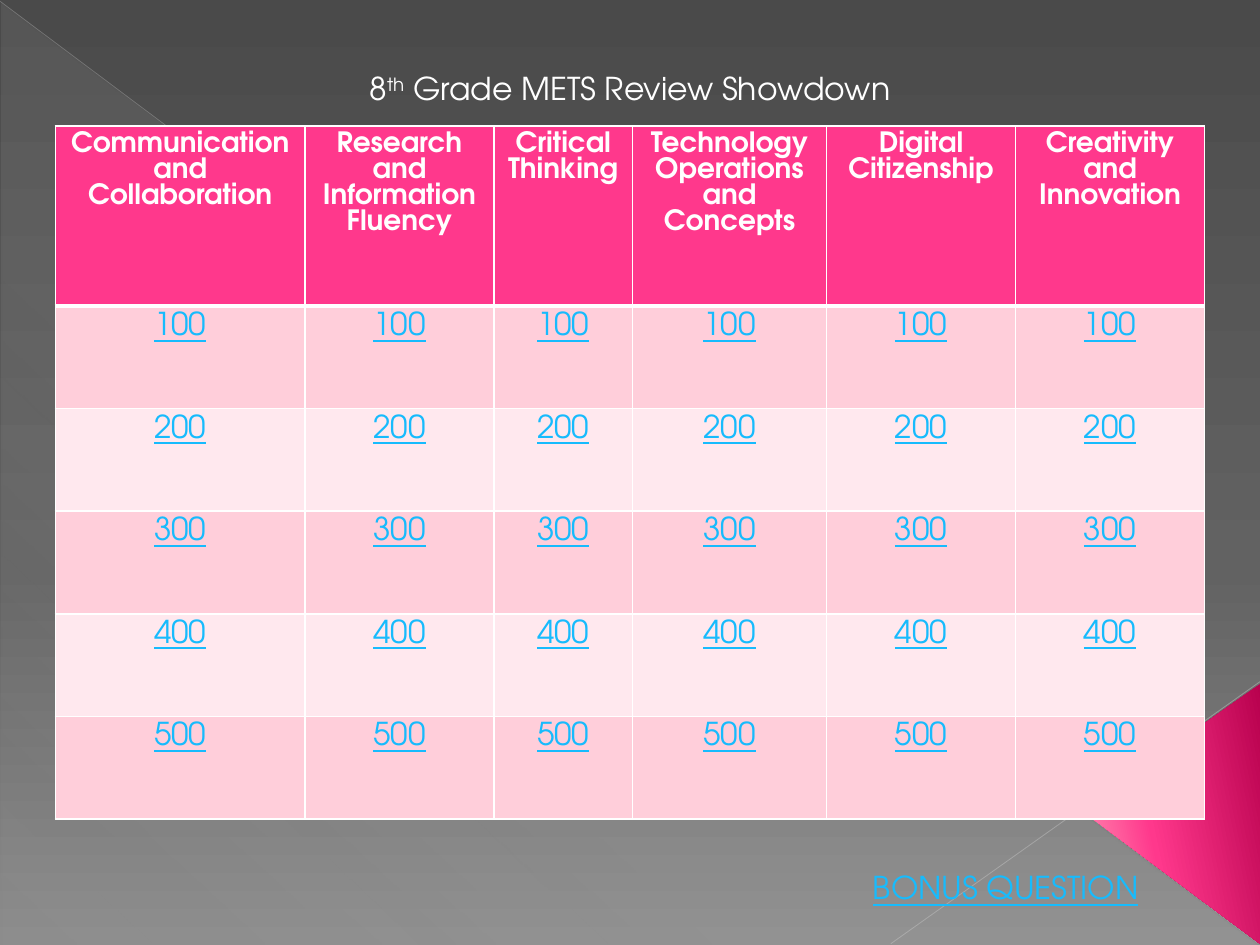
from lxml.etree import SubElement as Sub
from pptx import Presentation
from pptx.dml.color import RGBColor as Rgb
from pptx.enum.shapes import MSO_CONNECTOR as Conn, MSO_SHAPE as Kind
from pptx.enum.text import MSO_ANCHOR as Anchor, PP_ALIGN as Align
from pptx.oxml.ns import qn
from pptx.util import Inches, Pt

FONT = "TeX Gyre Adventor"
HUES = {
    "white": "FFFFFF", "head": "FF388C", "odd": "FFCEDA", "even": "FFE8EE",
    "link": "17BBFD", "top": "4A4A4A", "mid": "626262", "base": "8C8C8C",
    "haze": "D2D2D2", "dark": "B8014E", "pale": "FF9CB9",
    "long": "BFBFBF", "short": "C6C6C6",
}
HEADS = [
    "Communication and Collaboration", "Research and Information Fluency",
    "Critical Thinking", "Technology Operations and Concepts",
    "Digital Citizenship", "Creativity and Innovation",
]
WIDTHS = [1.98, 1.5, 1.1, 1.54, 1.5, 1.5]


def tint(node, hue, alpha=100):
    """Add a colour with its opacity to an XML node."""
    clr = Sub(node, qn("a:srgbClr"), val=HUES[hue])
    if alpha < 100:
        Sub(clr, qn("a:alpha"), val=str(alpha * 1000))


def blend(props, stops, angle):
    """Swap the solid fill of a property node for a gradient."""
    old = props.find(qn("a:solidFill"))
    grad = Sub(props, qn("a:gradFill"), rotWithShape="1")
    props.replace(old, grad)
    rows = Sub(grad, qn("a:gsLst"))
    for spot, hue, alpha in stops:
        tint(Sub(rows, qn("a:gs"), pos=str(spot * 1000)), hue, alpha)
    Sub(grad, qn("a:lin"), ang=str(angle * 60000), scaled="0")


def write(para, text, hue, size=18, bold=False, line=False, lift=0):
    """Add one styled run to a paragraph."""
    run = para.add_run()
    run.text = text
    font = run.font
    font.name, font.size, font.bold = FONT, Pt(size), bold
    font.color.rgb = Rgb.from_string(HUES[hue])
    if line:
        font.underline = True
    if lift:
        run._r.get_or_add_rPr().set("baseline", str(lift * 1000))


def wedge(slide, kind, box, stops, angle, turn=0):
    """Place a gradient triangle in a box."""
    shape = slide.shapes.add_shape(kind, *map(Inches, box))
    shape.shadow.inherit = False
    shape.line.fill.background()
    shape.fill.solid()
    blend(shape._element.spPr, stops, angle)
    shape.rotation = turn
    return shape


def stroke(slide, ends, hue, width, alpha):
    """Draw a thin translucent line."""
    line = slide.shapes.add_connector(Conn.STRAIGHT, *map(Inches, ends))
    line.line.width = Pt(width)
    line.line.color.rgb = Rgb.from_string(HUES[hue])
    props = line._element.spPr
    fill = props.find(qn("a:ln")).find(qn("a:solidFill"))
    fill.remove(fill[0])
    tint(fill, hue, alpha)
    Sub(props, qn("a:effectLst"))


def scene(slide, wide, high):
    """Paint the backdrop and its corner shapes."""
    slide.background.fill.solid()
    back = slide.element.find(".//" + qn("p:bgPr"))
    blend(back, [(0, "top", 100), (60, "mid", 100), (100, "base", 100)], 90)
    wedge(slide, Kind.RIGHT_TRIANGLE, (0.01, 0.02, wide - 0.02, high - 0.02),
          [(0, "haze", 10), (70, "haze", 8), (100, "haze", 1)], 133)
    stroke(slide, (0, 0.01, wide - 0.01, high - 0.01), "long", 0.39, 35)
    stroke(slide, (wide, 5.41, 7.07, high - 0.01), "short", 0.47, 45)
    peak = wedge(slide, Kind.ISOSCELES_TRIANGLE, (8.26, 5.75, 2.07, 1.42),
                 [(0, "dark", 100), (60, "head", 100), (100, "pale", 100)],
                 258, 270)
    peak.adjustments[0] = 0.513


def edge(cell, base):
    """Give a cell white borders with a chosen bottom width."""
    props = cell._tc.get_or_add_tcPr()
    sides = [("lnL", 1), ("lnR", 1), ("lnT", 1), ("lnB", base)]
    for spot, (side, width) in enumerate(sides):
        line = Sub(props, qn("a:" + side), w=str(Pt(width)))
        tint(Sub(line, qn("a:solidFill")), "white")
        props.insert(spot, line)


def board(slide, left, top, wide, high, head=1.43):
    """Build the grid of topics and point values."""
    rows = [HEADS] + [[str(n * 100)] * len(HEADS) for n in range(1, 6)]
    table = slide.shapes.add_table(
        len(rows), len(HEADS), *map(Inches, (left, top, wide, high))).table
    table.horz_banding = False
    for col, width in zip(table.columns, WIDTHS):
        col.width = Inches(width)
    for i, row in enumerate(rows):
        table.rows[i].height = Inches((high - head) / 5 if i else head)
        for j, text in enumerate(row):
            cell = table.cell(i, j)
            cell.fill.solid()
            hue = ("odd" if i % 2 else "even") if i else "head"
            cell.fill.fore_color.rgb = Rgb.from_string(HUES[hue])
            edge(cell, 1 if i else 3)
            para = cell.text_frame.paragraphs[0]
            para.alignment = Align.CENTER
            if i:
                write(para, text, "link", line=True)
            else:
                write(para, text, "white", 16, bold=True)


def title(slide, *box):
    """Fill and place the title."""
    head = slide.shapes.title
    head.left, head.top, head.width, head.height = map(Inches, box)
    slide.shapes._spTree.append(head._element)
    frame = head.text_frame
    frame.vertical_anchor = Anchor.TOP
    para = frame.paragraphs[0]
    para.alignment = Align.CENTER
    write(para, "8", "white")
    write(para, "th", "white", lift=30)
    write(para, " Grade METS Review Showdown", "white")


def bonus(slide, *box):
    """Add the bonus label."""
    frame = slide.shapes.add_textbox(*map(Inches, box)).text_frame
    frame.word_wrap = True
    write(frame.paragraphs[0], "BONUS QUESTION", "link", line=True)


def main():
    """Build and save the slide."""
    deck = Presentation()
    deck.slide_width, deck.slide_height = Inches(10), Inches(7.5)
    slide = deck.slides.add_slide(deck.slide_layouts[5])
    scene(slide, 10, 7.5)
    board(slide, 0.44, 1, 9.12, 5.5)
    title(slide, 0.75, 0.5, 8.5, 0.4)
    bonus(slide, 6.83, 6.84, 2.92, 0.4)
    deck.save("out.pptx")


if __name__ == "__main__":
    main()
